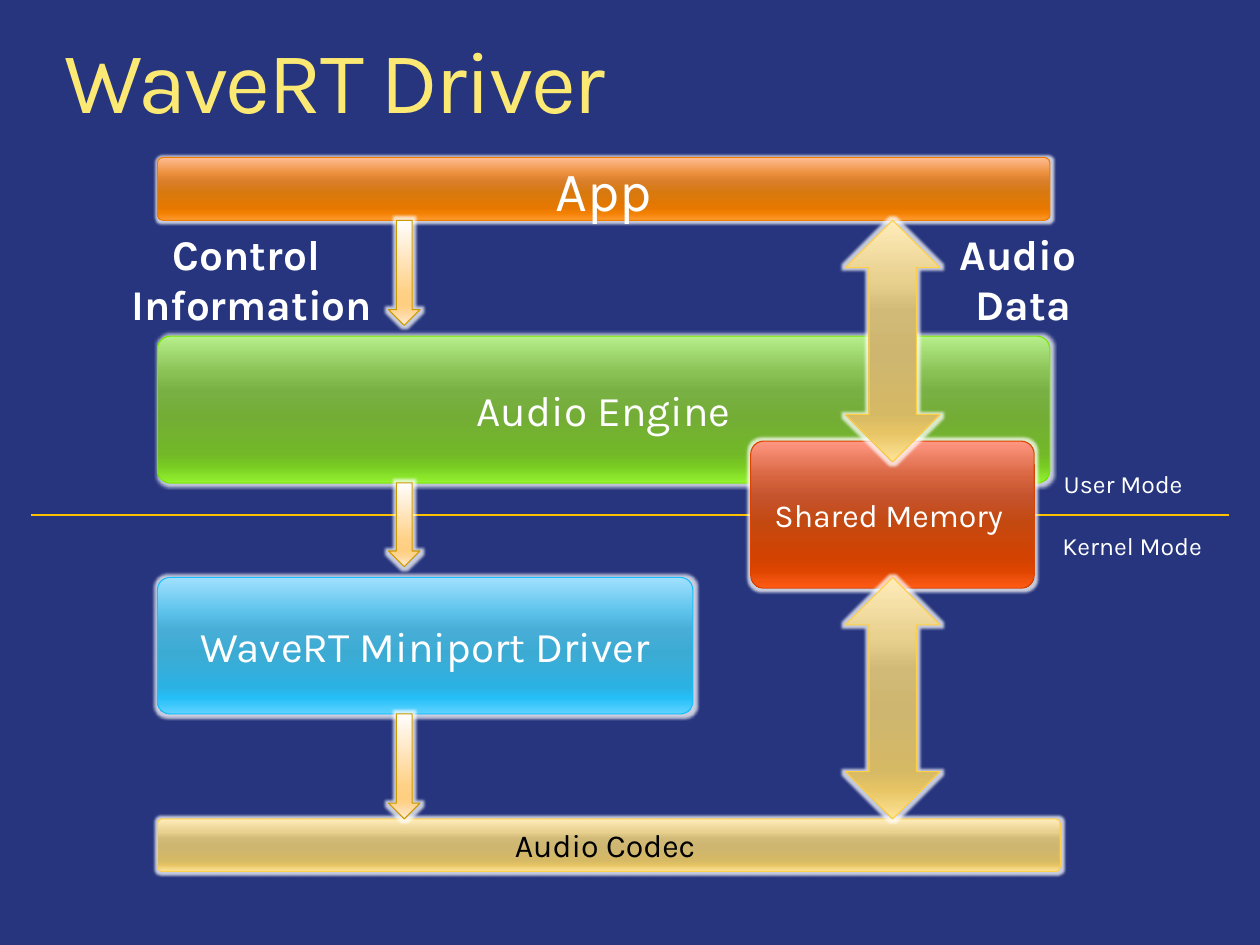
import dataclasses

import pptx
import pptx.dml.color
import pptx.enum.shapes
import pptx.enum.text
import pptx.oxml
import pptx.oxml.ns
import pptx.util
from lxml import etree

Cm = pptx.util.Cm
Pt = pptx.util.Pt
RGB = pptx.dml.color.RGBColor.from_string
PRESET = pptx.enum.shapes.MSO_SHAPE
ALIGN = pptx.enum.text.PP_ALIGN
ANCHOR = pptx.enum.text.MSO_ANCHOR
FIT = pptx.enum.text.MSO_AUTO_SIZE

GLOSS_STOPS = (0, 25, 38, 55, 80, 88, 100)
ARROW_STOPS = (0, 68, 81, 86, 100)


@dataclasses.dataclass(frozen=True)
class Finish:
    stops: tuple
    colors: str
    line: str


@dataclasses.dataclass(frozen=True)
class Theme:
    font: str = "Karla"
    background: str = "26357E"
    white: str = "FFFFFF"
    black: str = "000000"
    title: str = "FCE974"
    divider: str = "FFC000"
    title_size: int = 60
    app_size: int = 38
    block_size: int = 29
    small_size: int = 22
    mode_size: int = 17
    orange: Finish = Finish(GLOSS_STOPS, "FFBC93 EC903D D97E2B D8790F E67800 F27F00 FF9A2E", "ED7C00")
    green: Finish = Finish(GLOSS_STOPS, "B6EF8B 8AC155 79B044 73AD35 72B828 78CA22 94F32F", "77E700")
    blue: Finish = Finish(GLOSS_STOPS, "A0E0FF 5DC3EB 49AED7 3CABD4 2CB1E3 24BFF8 5FD3FF", "18C0FF")
    red: Finish = Finish(GLOSS_STOPS, "FF9782 D6643E C5532C C44911 D34200 DE4500 FF5C16", "DA4400")
    gold: Finish = Finish(GLOSS_STOPS, "FFECBA E8D08E D1B977 CEB670 D6B965 E7C565 FFE498", "FFCF46")
    cream: Finish = Finish(ARROW_STOPS, "FFFEFE FFD187 FFCF81 FFD390 FFEBD3", "CC9A00")


THEME = Theme()


def apply_finish(shape, finish):
    """Give a shape its vertical gradient, outline and white glow."""
    shape.shadow.inherit = False
    shape.line.color.rgb = RGB(finish.line)
    shape.line.width = Pt(0.75)
    shape.fill.gradient()
    shape.fill.gradient_angle = 270
    qn = pptx.oxml.ns.qn
    properties = shape.element.spPr
    stop_list = properties.find(qn("a:gradFill")).find(qn("a:gsLst"))
    for stop in list(stop_list):
        stop_list.remove(stop)
    for position, color in zip(finish.stops, finish.colors.split()):
        stop = etree.SubElement(stop_list, qn("a:gs"), pos=str(position * 1000))
        etree.SubElement(stop, qn("a:srgbClr"), val=color)
    glow = etree.SubElement(properties.find(qn("a:effectLst")), qn("a:glow"), rad=str(Pt(4)))
    glow_color = etree.SubElement(glow, qn("a:srgbClr"), val=THEME.white)
    etree.SubElement(glow_color, qn("a:alpha"), val="75000")


def write_text(shape, text, size, color, align=ALIGN.CENTER, bold=False, **frame_format):
    """Write one paragraph into a shape."""
    frame = shape.text_frame
    margins = dict(margin_left=Cm(0.3), margin_right=Cm(0.3), margin_top=Cm(0.15), margin_bottom=Cm(0.15))
    for name, value in {"word_wrap": True, **margins, **frame_format}.items():
        setattr(frame, name, value)
    paragraph = frame.paragraphs[0]
    paragraph.alignment = align
    for index, line in enumerate(text.split("\n")):
        if index:
            paragraph.add_line_break()
        run = paragraph.add_run()
        run.text = line
        for name, value in dict(name=THEME.font, size=Pt(size), bold=bold).items():
            setattr(run.font, name, value)
        run.font.color.rgb = RGB(color)
    return paragraph


def add_preset(slide, preset, box, finish):
    """Add a glossy preset shape."""
    shape = slide.shapes.add_shape(preset, *map(Cm, box))
    apply_finish(shape, finish)
    return shape


def add_block(slide, box, finish, text, size, color=THEME.white):
    """Add a rounded block with a centred caption."""
    shape = add_preset(slide, PRESET.ROUNDED_RECTANGLE, box, finish)
    shape.adjustments[0] = 0.09
    write_text(shape, text, size, color, vertical_anchor=ANCHOR.MIDDLE)


def add_control_arrow(slide, top, height):
    """Add a thin arrow of the control path."""
    add_preset(slide, PRESET.DOWN_ARROW, (9.4, top, 0.76, height), THEME.cream)


def add_data_arrow(slide, top):
    """Add a wide two-way arrow of the data path."""
    add_preset(slide, PRESET.UP_DOWN_ARROW, (20.45, top, 2.29, 5.84), THEME.gold)


def add_label(slide, box, text, size, color=THEME.white, **options):
    """Add a text box and return its paragraph."""
    label = slide.shapes.add_textbox(*map(Cm, box))
    return write_text(label, text, size, color, **options)


def add_title(slide, text):
    """Add the slide title."""
    paragraph = add_label(slide, (1.27, 0.76, 27.94, 2.31), text, THEME.title_size, THEME.title, align=ALIGN.LEFT)
    paragraph.line_spacing = 0.9
    paragraph.runs[0].font._element.set("spc", "-150")


def add_divider(slide):
    """Add the line between user mode and kernel mode."""
    line = slide.shapes.add_connector(
        pptx.enum.shapes.MSO_CONNECTOR.STRAIGHT, Cm(0.76), Cm(12.45), Cm(29.72), Cm(12.45))
    line.line.color.rgb = RGB(THEME.divider)
    line.line.width = Pt(1.5)
    etree.SubElement(line._element.spPr, pptx.oxml.ns.qn("a:effectLst"))


def main():
    """Build the driver diagram and save it."""
    presentation = pptx.Presentation()
    presentation.slide_width = Cm(30.48)
    presentation.slide_height = Cm(22.86)
    slide = presentation.slides.add_slide(presentation.slide_layouts[6])
    slide.background.fill.solid()
    slide.background.fill.fore_color.rgb = RGB(THEME.background)

    add_block(slide, (3.81, 13.97, 12.95, 3.3), THEME.blue, "WaveRT Miniport Driver", THEME.block_size)
    add_title(slide, "WaveRT Driver")
    add_block(slide, (3.81, 3.81, 21.59, 1.52), THEME.orange, "App", THEME.app_size)
    add_divider(slide)
    for box, text in (((25.43, 11.18, 3.53, 1.02), "User Mode"), ((25.4, 12.7, 3.99, 1.02), "Kernel Mode")):
        add_label(slide, box, text, THEME.mode_size, align=ALIGN.LEFT,
                  word_wrap=False, auto_size=FIT.SHAPE_TO_FIT_TEXT)
    add_block(slide, (3.81, 8.13, 21.59, 3.56), THEME.green, "Audio Engine", THEME.block_size)
    add_block(slide, (18.16, 10.67, 6.86, 3.56), THEME.red, "Shared Memory ", THEME.small_size)
    add_block(slide, (3.81, 19.81, 21.84, 1.27), THEME.gold, "Audio Codec ", THEME.small_size, THEME.black)
    for top, height in ((5.33, 2.54), (11.68, 2.03), (17.27, 2.54)):
        add_control_arrow(slide, top, height)
    for top in (13.97, 5.33):
        add_data_arrow(slide, top)
    for left, width, text in ((22.73, 4.06, "Audio \nData"), (0.76, 10.67, "Control \nInformation")):
        add_label(slide, (left, 5.36, width, 2.77), text, THEME.block_size, bold=True,
                  auto_size=FIT.SHAPE_TO_FIT_TEXT)
    presentation.save("out.pptx")


if __name__ == "__main__":
    main()
